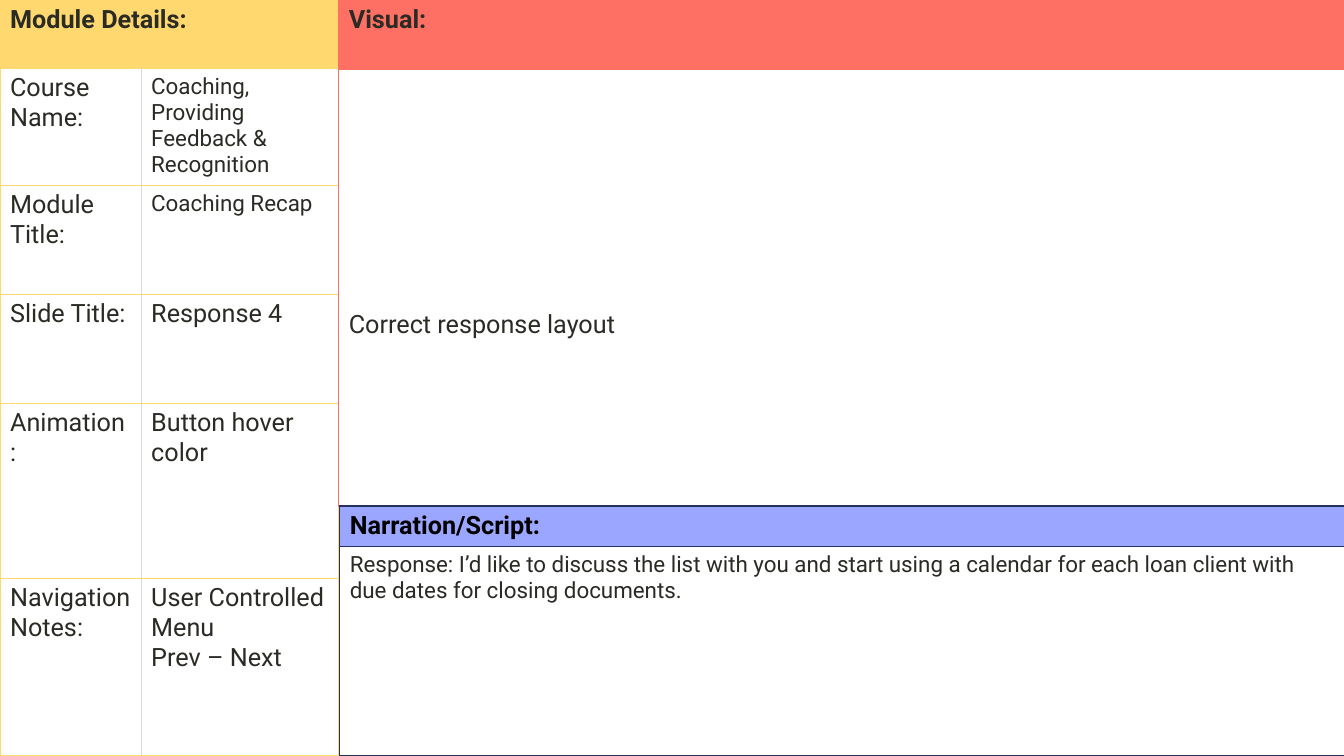
import pptx
import pptx.util
import pptx.dml.color
import pptx.oxml
import pptx.oxml.ns

Inches = pptx.util.Inches
Pt = pptx.util.Pt


def tint(code):
    return pptx.dml.color.RGBColor.from_string(code)


class Board:
    font = "Roboto"
    ink = "2B2B26"
    paper = "FFFFFF"
    rule = "D9D9D9"

    def __init__(self, deck):
        self.slide = deck.slides.add_slide(deck.slide_layouts[6])
        back = self.slide.background.fill
        back.solid()
        back.fore_color.rgb = tint("F9F9F9")

    def edge(self, cell, side, color):
        props = cell._tc.get_or_add_tcPr()
        props.append(pptx.oxml.parse_xml(
            f'<a:{side} {pptx.oxml.ns.nsdecls("a")} w="12700">'
            f'<a:solidFill><a:srgbClr val="{color}"/></a:solidFill></a:{side}>'))

    def label(self, cell, text, size=18, bold=False, color=ink):
        cell.text = text
        style = {"name": self.font, "size": Pt(size), "bold": bold}
        for para in cell.text_frame.paragraphs:
            for run in para.runs:
                for key, value in style.items():
                    setattr(run.font, key, value)
                run.font.color.rgb = tint(color)

    def table(self, left, top, cols, rows, line):
        frame = self.slide.shapes.add_table(
            len(rows), len(cols), Inches(left), Inches(top),
            Inches(sum(cols)), Inches(sum(rows)))
        grid = frame.table
        grid.first_row = grid.horz_banding = False
        for col, width in zip(grid.columns, cols):
            col.width = Inches(width)
        for row, height in zip(grid.rows, rows):
            row.height = Inches(height)
            for i, cell in enumerate(row.cells):
                # Inner column rules are grey, the rest take the table color
                self.edge(cell, "lnL", self.rule if i else line)
                self.edge(cell, "lnR", line if i == len(cols) - 1 else self.rule)
                self.edge(cell, "lnT", line)
                self.edge(cell, "lnB", line)
                self.fill(cell, self.paper)
        return grid

    def fill(self, cell, color):
        cell.fill.solid()
        cell.fill.fore_color.rgb = tint(color)

    def head(self, cell, text, fill, color=ink):
        self.fill(cell, fill)
        self.label(cell, text, bold=True, color=color)


def main():
    deck = pptx.Presentation()
    deck.slide_width = Inches(13.33)
    deck.slide_height = Inches(7.5)
    board = Board(deck)
    gold, coral, navy = "FFD96F", "FF7064", "233060"
    wide = [9.98]

    # Module details
    facts = [
        ("Course Name:", "Coaching, Providing Feedback & Recognition", 16),
        ("Module Title:", "Coaching Recap", 16),
        ("Slide Title:", "Response 4", 18),
        ("Animation:", "Button hover color", 18),
        ("Navigation Notes:", "User Controlled\nMenu\nPrev – Next", 18),
    ]
    grid = board.table(0, 0, [1.4, 1.96],
                       [0.68, 1.16, 1.08, 1.08, 1.74, 1.76], gold)
    grid.cell(0, 0).merge(grid.cell(0, 1))
    board.head(grid.cell(0, 0), "Module Details:", gold)
    for i, (name, value, size) in enumerate(facts, 1):
        board.label(grid.cell(i, 0), name)
        board.label(grid.cell(i, 1), value, size)

    # Visual
    grid = board.table(3.36, 0, wide, [0.69, 4.33], coral)
    board.head(grid.cell(0, 0), "Visual:", coral)
    board.label(grid.cell(1, 0), "Correct response layout")
    grid.cell(1, 0).margin_top = Inches(2.39)

    # Narration
    grid = board.table(3.37, 5.02, wide, [0.4], navy)
    board.head(grid.cell(0, 0), "Narration/Script:", "9AA6FF", "000000")
    grid = board.table(3.37, 5.42, wide, [2.08], navy)
    board.label(grid.cell(0, 0),
                "Response: I’d like to discuss the list with you and start "
                "using a calendar for each loan client with due dates for "
                "closing documents.", 16)

    deck.save("out.pptx")


if __name__ == "__main__":
    main()
